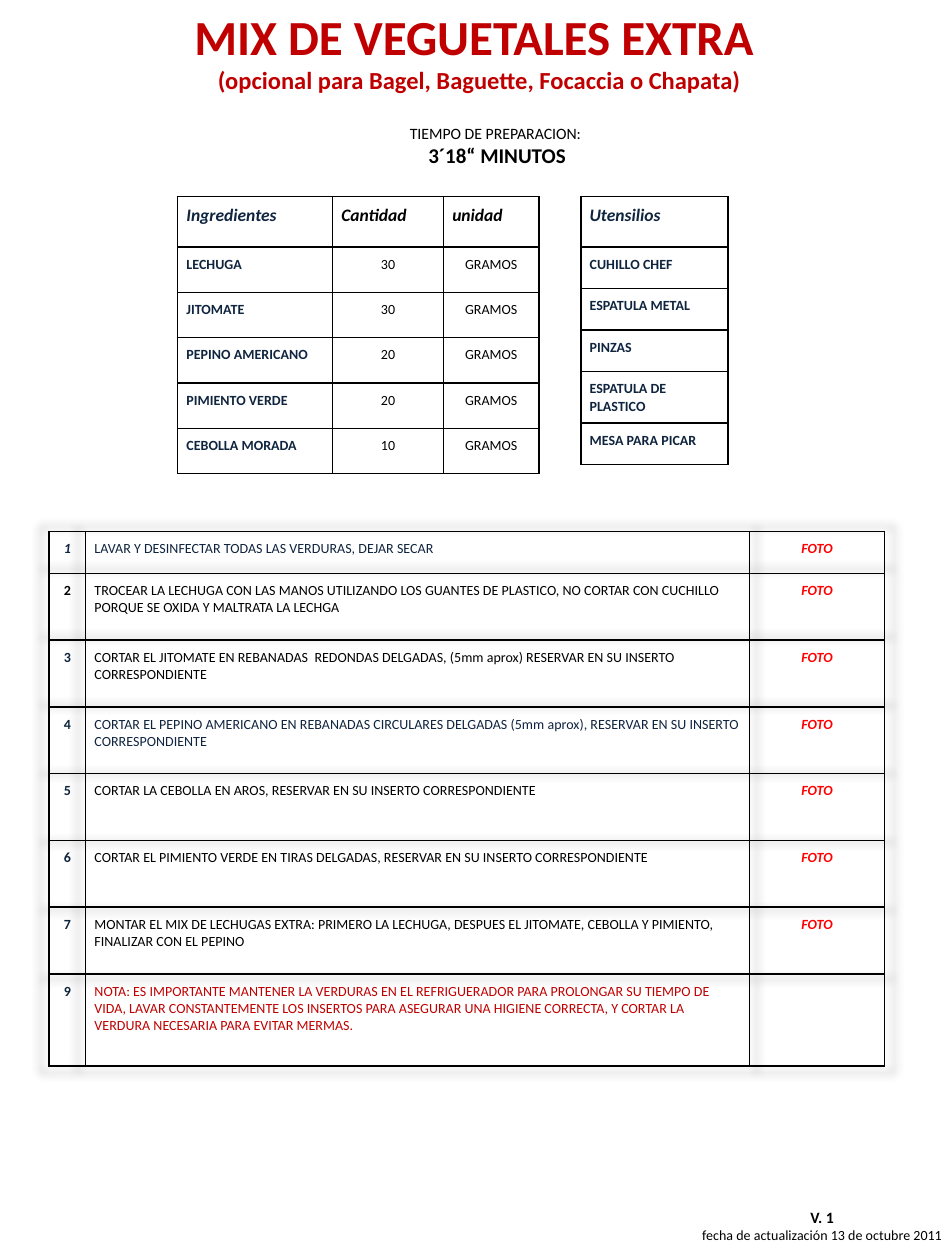
from lxml import etree
from pptx import Presentation
from pptx.dml.color import RGBColor
from pptx.enum import text as t
from pptx.oxml import ns, parse_xml
from pptx.util import Inches, Pt

NAVY, BLACK, RED, WINE = "0F243E", "000000", "FF0000", "C00000"
LEFT, MID, RIGHT = t.PP_ALIGN.LEFT, t.PP_ALIGN.CENTER, t.PP_ALIGN.RIGHT

FOODS = [
    ("LECHUGA", "30"),
    ("JITOMATE", "30"),
    ("PEPINO AMERICANO", "20"),
    ("PIMIENTO VERDE", "20"),
    ("CEBOLLA MORADA", "10"),
]
TOOLS = ["CUHILLO CHEF", "ESPATULA METAL", "PINZAS", "ESPATULA DE PLASTICO", "MESA PARA PICAR"]
STEPS = [
    ("1", NAVY, "LAVAR Y DESINFECTAR TODAS LAS VERDURAS, DEJAR SECAR"),
    ("2", BLACK, "TROCEAR LA LECHUGA CON LAS MANOS UTILIZANDO LOS GUANTES DE PLASTICO, "
     "NO CORTAR CON CUCHILLO PORQUE SE OXIDA Y MALTRATA LA LECHGA"),
    ("3", BLACK, "CORTAR EL JITOMATE EN REBANADAS  REDONDAS DELGADAS, (5mm aprox) "
     "RESERVAR EN SU INSERTO CORRESPONDIENTE"),
    ("4", NAVY, "CORTAR EL PEPINO AMERICANO EN REBANADAS CIRCULARES DELGADAS (5mm aprox), "
     "RESERVAR EN SU INSERTO CORRESPONDIENTE"),
    ("5", BLACK, "CORTAR LA CEBOLLA EN AROS, RESERVAR EN SU INSERTO CORRESPONDIENTE"),
    ("6", BLACK, "CORTAR EL PIMIENTO VERDE EN TIRAS DELGADAS, RESERVAR EN SU INSERTO CORRESPONDIENTE"),
    ("7", BLACK, "MONTAR EL MIX DE LECHUGAS EXTRA: PRIMERO LA LECHUGA, DESPUES EL JITOMATE, "
     "CEBOLLA Y PIMIENTO, FINALIZAR CON EL PEPINO"),
    ("9", WINE, "NOTA: ES IMPORTANTE MANTENER LA VERDURAS EN EL REFRIGUERADOR PARA PROLONGAR "
     "SU TIEMPO DE VIDA, LAVAR CONSTANTEMENTE LOS INSERTOS PARA ASEGURAR UNA HIGIENE CORRECTA, "
     "Y CORTAR LA VERDURA NECESARIA PARA EVITAR MERMAS."),
]


def paint(font, color):
    font.color.rgb = RGBColor.from_string(color)


def style(para, words, size=8, color=BLACK, bold=False, slant=False, align=LEFT):
    para.text = words
    para.alignment = align
    font = para.font
    font.name, font.size, font.bold, font.italic = "Calibri", Pt(size), bold, slant
    paint(font, color)


def write(frame, lines):
    for i, line in enumerate(lines):
        para = frame.add_paragraph() if i else frame.paragraphs[0]
        style(para, **line)


def add_text(slide, box, lines, wrap=True):
    frame = slide.shapes.add_textbox(*map(Inches, box)).text_frame
    frame.word_wrap = wrap
    frame.auto_size = t.MSO_AUTO_SIZE.SHAPE_TO_FIT_TEXT
    write(frame, lines)
    return frame


def add_edges(cell):
    props = cell._tc.get_or_add_tcPr()
    for i, side in enumerate(("lnL", "lnR", "lnT", "lnB")):
        line = etree.Element(ns.qn("a:" + side), w=str(Pt(1)))
        fill = etree.SubElement(line, ns.qn("a:solidFill"))
        etree.SubElement(fill, ns.qn("a:srgbClr"), val=BLACK)
        props.insert(i, line)


def add_grid(slide, left, top, cols, rows, cells, edges=True):
    shape = slide.shapes.add_table(
        len(rows), len(cols), Inches(left), Inches(top), Inches(sum(cols)), Inches(sum(rows)))
    grid = shape.table
    grid.first_row = grid.horz_banding = False
    for col, width in zip(grid.columns, cols):
        col.width = Inches(width)
    for row, height, data in zip(grid.rows, rows, cells):
        row.height = Inches(height)
        for cell, lines in zip(row.cells, data):
            cell.fill.background()
            write(cell.text_frame, lines)
            if edges:
                cell.margin_left = cell.margin_right = Inches(0.07)
                cell.margin_top = cell.margin_bottom = Inches(0.07)
                add_edges(cell)
    return grid


def add_glow(grid):
    grid._tbl.tblPr.insert(0, parse_xml(
        f'<a:effectLst {ns.nsdecls("a")}><a:outerShdw blurRad="63500" sx="102000" sy="102000" '
        'algn="ctr" rotWithShape="0"><a:srgbClr val="000000"><a:alpha val="40000"/>'
        '</a:srgbClr></a:outerShdw></a:effectLst>'))


def item(words, **look):
    return [dict(words=words, **look)]


def head(words, color=BLACK):
    return item(words, size=10, color=color, bold=True, slant=True)


def label(words):
    return item(words, color=NAVY, bold=True)


def add_foods(slide):
    cells = [[head("Ingredientes", NAVY), head("Cantidad"), head("unidad")]]
    cells += [[label(name), item(count, align=MID), item("GRAMOS", align=MID)]
              for name, count in FOODS]
    add_grid(slide, 1.41, 1.56, [1.23, 0.88, 0.76], [0.4] + [0.36] * len(FOODS), cells)


def add_tools(slide):
    cells = [[head("Utensilios", NAVY)]] + [[label(name)] for name in TOOLS]
    add_grid(slide, 4.61, 1.56, [1.17], [0.4] + [0.33] * len(TOOLS), cells)


def add_steps(slide):
    cells = []
    for num, color, words in STEPS:
        tint = BLACK if num == "2" else NAVY
        photo = "" if num == "9" else "FOTO"
        cells.append([
            item(num, color=tint, bold=True, slant=num == "1", align=MID),
            item(words, color=color),
            item(photo, color=RED, bold=True, slant=True, align=MID)])
    rows = [0.33] + [0.53] * (len(STEPS) - 2) + [0.73]
    add_glow(add_grid(slide, 0.39, 4.22, [0.29, 5.27, 1.07], rows, cells))


def main():
    deck = Presentation()
    deck.slide_width, deck.slide_height = Inches(7.5), Inches(10)
    slide = deck.slides.add_slide(deck.slide_layouts[6])
    add_text(slide, (-0.31, 0, 8.23, 0.81), [
        dict(words="MIX DE VEGUETALES EXTRA ", size=28, color=WINE, bold=True, align=MID),
        dict(words="(opcional para Bagel, Baguette, Focaccia o Chapata)",
             size=14, color=WINE, bold=True, align=MID)])
    add_foods(slide)
    add_tools(slide)
    add_steps(slide)
    foot = add_text(slide, (5.47, 9.53, 2.17, 0.39), [
        dict(words="V. 1", size=9, bold=True, align=MID),
        dict(words="fecha de actualización 13 de octubre 2011", align=RIGHT)], wrap=False)
    foot.vertical_anchor = t.MSO_ANCHOR.MIDDLE
    foot.margin_right = Inches(0.16)
    add_grid(slide, 2.97, 0.94, [1.95], [0.45], [[[
        dict(words="TIEMPO DE PREPARACION: ", size=9, align=MID),
        dict(words="3´18“ MINUTOS", size=12, bold=True, align=MID)]]], edges=False)
    deck.save("out.pptx")


if __name__ == "__main__":
    main()
